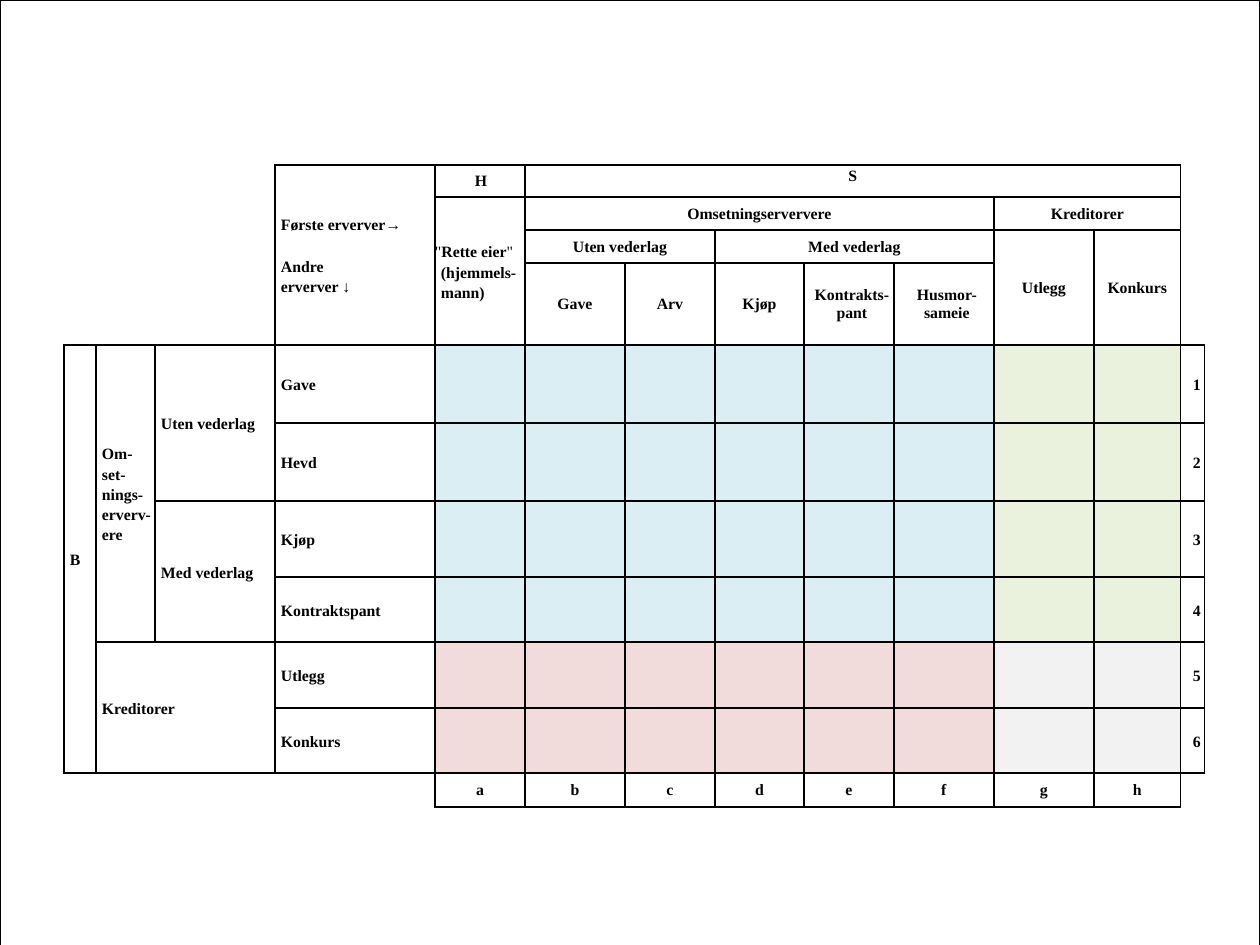
from lxml.etree import SubElement
from pptx import Presentation
from pptx.dml.color import RGBColor
from pptx.enum.shapes import MSO_SHAPE as Shape
from pptx.enum.text import MSO_ANCHOR as Anchor, PP_ALIGN as Align
from pptx.oxml.ns import qn
from pptx.util import Pt

PX = 7257
FONT = "Times New Roman"
BLACK, WHITE = "000000", "FFFFFF"
BLUE, GREEN, ROSE, GREY = "DAEEF3", "EAF1DD", "F2DBDB", "F2F2F2"


def paint(fill, color):
    fill.solid()
    fill.fore_color.rgb = RGBColor.from_string(color)


def write(paragraph, text, align=Align.LEFT, indent=0, line=1.15, before=0, bold=True):
    paragraph.alignment = align
    paragraph.line_spacing = line
    paragraph.space_before = Pt(before)
    paragraph._p.get_or_add_pPr().set("marL", str(indent * PX))
    for index, part in enumerate(text.split("\n")):
        if index:
            paragraph.add_line_break()
        run = paragraph.add_run()
        run.text = part
        run.font.name = FONT
        run.font.size = Pt(9)
        run.font.bold = bold
        paint(run.font.fill, BLACK)


deck = Presentation()
deck.slide_width, deck.slide_height = 1260 * PX, 945 * PX
slide = deck.slides.add_slide(deck.slide_layouts[6])

page = slide.shapes.add_shape(Shape.RECTANGLE, 0, 0, 1260 * PX, 979 * PX)
page.shadow.inherit = False
paint(page.fill, WHITE)
paint(page.line.fill, BLACK)
page.line.width = Pt(0.75)

widths = [32, 59, 120, 160, 90, 100, 90, 89, 90, 100, 100, 87, 24]
heights = [32, 33, 33, 82, 78, 78, 76, 65, 66, 65, 34]
matrix = slide.shapes.add_table(
    len(heights), len(widths), 64 * PX, 165 * PX, sum(widths) * PX, sum(heights) * PX
).table
matrix.first_row = matrix.horz_banding = False
for column, width in zip(matrix.columns, widths):
    column.width = width * PX
for row, height in zip(matrix.rows, heights):
    row.height = height * PX

open_corners = [
    (range(0, 4), range(0, 3), "RB"),
    (range(0, 4), range(12, 13), "LB"),
    (range(10, 11), range(0, 4), "RT"),
    (range(10, 11), range(12, 13), "LT"),
]
for r in range(len(heights)):
    for c in range(len(widths)):
        cell = matrix.cell(r, c)
        cell.margin_left = cell.margin_right = cell.margin_top = cell.margin_bottom = 0
        cell.vertical_anchor = Anchor.MIDDLE
        SubElement(cell.text_frame.paragraphs[0]._p, qn("a:endParaRPr"), sz="900")
        sides = "LRTB"
        for corner_rows, corner_columns, drawn in open_corners:
            if r in corner_rows and c in corner_columns:
                sides = drawn
        for side in "LRTB":
            border = SubElement(cell._tc.get_or_add_tcPr(), qn("a:ln" + side), w=str(Pt(1)))
            if side in sides:
                ink = SubElement(border, qn("a:solidFill"))
                SubElement(ink, qn("a:srgbClr"), val=BLACK)
            else:
                SubElement(border, qn("a:noFill"))
        if 4 <= r <= 9 and 4 <= c <= 11:
            before_creditors = BLUE if r < 8 else ROSE
            among_creditors = GREEN if r < 8 else GREY
            paint(cell.fill, before_creditors if c < 10 else among_creditors)
        else:
            cell.fill.background()

spans = [
    (0, 0, 4, 3), (0, 3, 4, 1), (0, 5, 1, 7), (0, 12, 4, 1),
    (1, 4, 3, 1), (1, 5, 1, 5), (1, 10, 1, 2),
    (2, 5, 1, 2), (2, 7, 1, 3), (2, 10, 2, 1), (2, 11, 2, 1),
    (4, 0, 6, 1), (4, 1, 4, 1), (4, 2, 2, 1), (6, 2, 2, 1),
    (8, 1, 2, 2), (10, 0, 1, 4),
]
for r, c, tall, wide in spans:
    matrix.cell(r, c).merge(matrix.cell(r + tall - 1, c + wide - 1))

headings = [
    (0, 4, "H", 2), (1, 5, "Omsetningserververe", 0), (1, 10, "Kreditorer", 0),
    (2, 5, "Uten vederlag", 0), (2, 7, "Med vederlag", 0),
    (2, 10, "Utlegg", 0), (2, 11, "Konkurs", 0),
    (3, 5, "Gave", 0), (3, 6, "Arv", 0), (3, 7, "Kjøp", 0),
    (3, 8, "Kontrakts-pant", 6), (3, 9, "Husmor-sameie", 6),
]
headings += [(10, c, letter, 0) for c, letter in enumerate("abcdefgh", 4)]
for r, c, text, indent in headings:
    write(matrix.cell(r, c).text_frame.paragraphs[0], text,
          align=Align.CENTER, indent=indent, line=Pt(10.4))

seller = matrix.cell(0, 5)
seller.vertical_anchor = Anchor.TOP
write(seller.text_frame.paragraphs[0], "S", align=Align.CENTER)

row_labels = [
    (4, 0, "B"), (4, 2, "Uten vederlag"), (6, 2, "Med vederlag"), (8, 1, "Kreditorer"),
]
acquirers = ["Gave", "Hevd", "Kjøp", "Kontraktspant", "Utlegg", "Konkurs"]
row_labels += [(r, 3, acquirer) for r, acquirer in enumerate(acquirers, 4)]
for r, c, text in row_labels:
    write(matrix.cell(r, c).text_frame.paragraphs[0], text, indent=6)

for r, number in enumerate("123456", 4):
    write(matrix.cell(r, 12).text_frame.paragraphs[0], number, align=Align.CENTER, indent=8)

axes = matrix.cell(0, 3).text_frame
write(axes.paragraphs[0], "Første erverver→", indent=6)
write(axes.add_paragraph(), "Andre\nerverver ↓", indent=6, before=12.5)

owner = matrix.cell(1, 4).text_frame
for text, bold in [('"', False), ("Rette eier", True), ('"', False)]:
    write(owner.paragraphs[0], text, bold=bold)
write(owner.add_paragraph(), "(hjemmels-mann)", indent=6, before=0.5)

traders = matrix.cell(4, 1).text_frame
write(traders.paragraphs[0], "Om-", indent=6)
write(traders.add_paragraph(), "set-nings-erverv-ere", indent=6, before=0.5)

deck.save("out.pptx")
